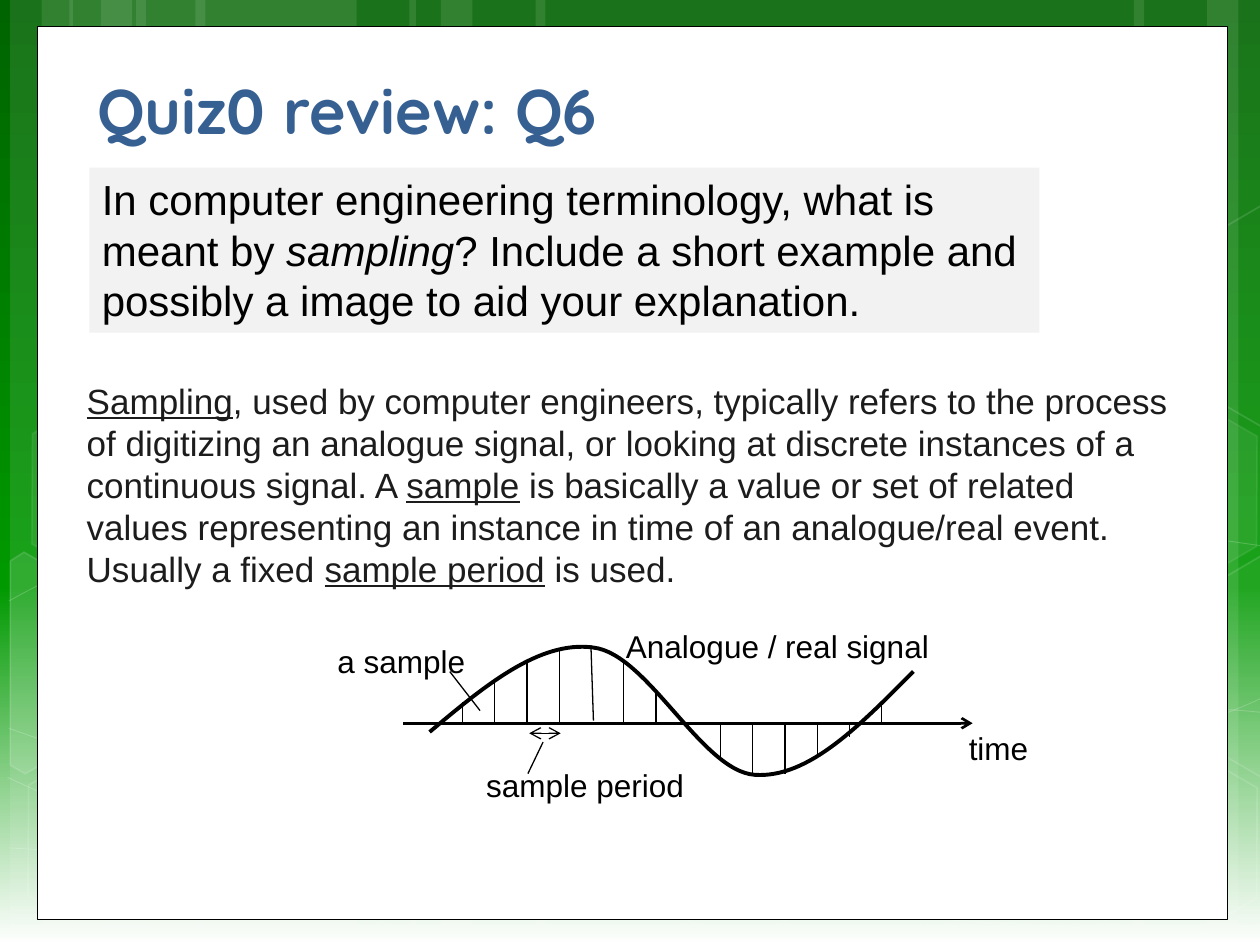
"""Build the quiz review slide that explains sampling with a signal diagram."""
from copy import deepcopy
from math import cos, radians, sin
from typing import NamedTuple

from lxml.etree import SubElement
from pptx import Presentation
from pptx.dml.color import RGBColor
from pptx.enum.shapes import MSO_CONNECTOR, MSO_SHAPE
from pptx.enum.text import MSO_ANCHOR, MSO_AUTO_SIZE, PP_ALIGN
from pptx.oxml.ns import qn
from pptx.util import Inches, Pt

COLORS = {"dark": "006400", "green": "009900", "white": "FFFFFF", "black": "000000",
          "title": "376092", "question": "F2F2F2", "answer": "1C1C1C"}
AXIS_Y = 5.74
TILT = 30


class Rect(NamedTuple):
    left: float
    top: float
    width: float
    height: float


class Hexagon(NamedTuple):
    left: float
    top: float
    fill_alpha: int
    line_alpha: int


class CutHexagon(NamedTuple):
    center: tuple
    points: list
    fill_alpha: int


class Span(NamedTuple):
    text: str
    style: str = ""


class Stroke(NamedTuple):
    start: tuple
    end: tuple
    width: float = 0.75
    arrows: tuple = ()


BANDS = [(1.08, 1.75), (0.08, 0.5), (0.33, 0.83), (1.55, 1.75), (0.55, 0.5), (0.8, 0.83),
         (7.33, 1.75), (9.58, 0.5), (9, 0.83), (4.25, 3.08), (3.25, 0.5), (3.5, 0.83)]
WAVES = [
    [(0.07, 6.73), (0.61, 6.76), (1.15, 6.79), (1.9, 6.78), (2.65, 6.77), (3.58, 6.75), (4.58, 6.65),
     (5.58, 6.55), (7, 6.36), (7.92, 6.17), (8.83, 5.98), (9.77, 5.68), (10.07, 5.51)],
    [(0.07, 4.77), (0.36, 4.61), (0.65, 4.46), (1.21, 4.31), (1.78, 4.16), (2.59, 3.94), (3.47, 3.87),
     (4.36, 3.8), (5.44, 3.79), (6.54, 3.87), (7.64, 3.95), (9.47, 4.26), (10.07, 4.34)],
    [(0.06, 6.17), (1.27, 6.72), (2.47, 7.27), (3.34, 7.49)],
    [(0.07, 5.78), (0.38, 5.89), (0.7, 6), (1.28, 6.16), (1.86, 6.31), (2.73, 6.56), (3.57, 6.73),
     (4.4, 6.9), (5.45, 7.08), (6.28, 7.18), (7.11, 7.29), (8, 7.33), (8.53, 7.36),
     (9.05, 7.4), (9.19, 7.38), (9.45, 7.38), (9.71, 7.37), (9.89, 7.35), (10.07, 7.34)],
    [(2.42, 7.49), (2.6, 7.29), (2.78, 7.09), (3.02, 6.91), (3.26, 6.73), (3.6, 6.53), (3.88, 6.39),
     (4.16, 6.25), (4.33, 6.19), (4.7, 6.09), (5.06, 5.99), (5.73, 5.85), (6.08, 5.78),
     (6.44, 5.71), (6.49, 5.71), (6.8, 5.69), (7.11, 5.66), (7.6, 5.63), (7.94, 5.62),
     (8.29, 5.61), (8.86, 5.62), (8.86, 5.62), (8.86, 5.62), (9.53, 5.62), (9.53, 5.62),
     (9.71, 5.63), (9.88, 5.64), (9.97, 5.65), (10.06, 5.66), (10.03, 5.65), (10.06, 5.66)],
]
HEXAGONS = [Hexagon(3.34, 0.36, 4, 8), Hexagon(4.97, 5.89, 6, 12), Hexagon(0.11, 5.91, 0, 12),
            Hexagon(0.14, 3.12, 7, 8), Hexagon(1.74, 5.92, 0, 12), Hexagon(8.34, 5.93, 0, 12),
            Hexagon(8.34, 3.14, 7, 8)]
CUT_HEXAGONS = [
    CutHexagon((0.36, 5.35), [(0.08, 4.45), (0.19, 4.38), (0.96, 4.82), (0.95, 5.7), (0.2, 6.14),
                              (0.08, 6.07)], 10),
    CutHexagon((9.85, 5.2), [(9.26, 4.85), (10.01, 4.41), (10.09, 4.46), (10.09, 6.13),
                             (10.02, 6.17), (9.26, 5.73)], 4),
    CutHexagon((9.85, 2.41), [(9.26, 2.07), (10.01, 1.63), (10.1, 1.68), (10.09, 3.35),
                              (10.02, 3.39), (9.26, 2.95)], 0),
]
SIGNAL = [(3.41, 5.81), (3.84, 5.45), (4.28, 5.08), (4.71, 5.14), (5.14, 5.19), (5.57, 6.12),
          (5.99, 6.15), (6.42, 6.18), (6.83, 5.75), (7.25, 5.33)]
FIRST_SAMPLE, SAMPLE_STEP = 3.67, 0.256
SAMPLE_ENDS = [5.57, 5.41, 5.26, 5.14, None, 5.26, 5.5, None, 6.03, 6.16, 6.14, 6.01, 5.85, 5.57]
STROKES = [Stroke((3.2, AXIS_Y), (7.72, AXIS_Y), 1.5, ("tailEnd",)),
           Stroke((4.71, 5.72), (4.69, 5.12)),
           Stroke((4.2, 5.82), (4.45, 5.82), arrows=("headEnd", "tailEnd")),
           Stroke((4.31, 5.89), (4.19, 6.14)), Stroke((3.81, 5.64), (3.57, 5.33))]
LABELS = {"time": Rect(7.59, 5.74, 0.68, 0.4), "Analogue / real signal": Rect(4.87, 4.93, 2.63, 0.4),
          "sample period": Rect(3.76, 6.03, 1.83, 0.4), "a sample": Rect(2.58, 5.05, 1.24, 0.4)}
QUESTION = [Span("In computer engineering terminology, what is meant by "), Span("sampling", "italic"),
            Span("? Include a short example and possibly a image to aid your explanation.")]
ANSWER = [
    Span("Sampling", "underline"),
    Span(", used by computer engineers, typically refers to the process of digitizing an analogue "
         "signal, or looking at discrete instances of a continuous signal. A "),
    Span("sample", "underline"),
    Span(" is basically a value or set of related values representing an instance in time of an "
         "analogue/real event. Usually a fixed "),
    Span("sample period", "underline"), Span(" is used."),
]


def color(name: str) -> RGBColor:
    return RGBColor.from_string(COLORS[name])


def set_alpha(element, percent: int) -> None:
    if percent < 100:
        SubElement(element.find(".//" + qn("a:srgbClr")), qn("a:alpha"), val=str(percent * 1000))


def paint(shape, fill="", fill_alpha=100, line="", line_width=1.0, line_alpha=100) -> None:
    shape.shadow.inherit = False
    shape.fill.background()
    shape.line.fill.background()
    if fill and fill_alpha:
        shape.fill.solid()
        shape.fill.fore_color.rgb = color(fill)
        set_alpha(shape.element.spPr.find(qn("a:solidFill")), fill_alpha)
    if line:
        shape.line.color.rgb = color(line)
        shape.line.width = Pt(line_width)
        set_alpha(shape.element.spPr.find(qn("a:ln")), line_alpha)


def add_preset(page, area: Rect, preset=MSO_SHAPE.RECTANGLE):
    return page.shapes.add_shape(preset, *map(Inches, area))


def add_outline(page, points: list, close: bool):
    corners = [(Inches(x), Inches(y)) for x, y in points]
    builder = page.shapes.build_freeform(*corners[0])
    builder.add_line_segments(corners[1:], close=close)
    return builder.convert_to_shape()


def add_curve(page, points: list):
    shape = add_outline(page, points, False)
    segments = list(shape.element.iter(qn("a:lnTo")))
    for first, second, third in zip(*[iter(segments)] * 3):
        first.tag = qn("a:cubicBezTo")
        for segment in (second, third):
            first.append(segment[0])
            segment.getparent().remove(segment)
    return shape


def turn_back(point: tuple, center: tuple) -> tuple:
    x, y = point[0] - center[0], point[1] - center[1]
    c, s = cos(radians(TILT)), sin(radians(TILT))
    return center[0] + c * x + s * y, center[1] - s * x + c * y


def add_stroke(page, stroke: Stroke) -> None:
    line = page.shapes.add_connector(MSO_CONNECTOR.STRAIGHT, *map(Inches, stroke.start + stroke.end))
    line.line.color.rgb = color("black")
    line.line.width = Pt(stroke.width)
    for arrow in stroke.arrows:
        SubElement(line.element.spPr.find(qn("a:ln")), qn("a:" + arrow), type="arrow")
    SubElement(line.element.spPr, qn("a:effectLst"))


def write(box, spans: list, size: int, ink: str, wrap=True, font="Arial", anchor=MSO_ANCHOR.TOP) -> None:
    frame = box.text_frame
    frame.word_wrap, frame.vertical_anchor = wrap, anchor
    frame.auto_size = MSO_AUTO_SIZE.NONE if box.is_placeholder else MSO_AUTO_SIZE.SHAPE_TO_FIT_TEXT
    para = frame.paragraphs[0]
    para.alignment = PP_ALIGN.LEFT
    para.font.name, para.font.size, para.font.color.rgb = font, Pt(size), color(ink)
    for span in spans:
        run = para.add_run()
        run.text = span.text
        if span.style:
            setattr(run.font, span.style, True)


def add_text_panel(page, area: Rect, fill: str, spans: list, size: int, ink: str) -> None:
    box = add_preset(page, area)
    paint(box, fill)
    write(box, spans, size, ink)


def add_backdrop(page) -> None:
    fill = page.background.fill
    fill.gradient()
    fill.gradient_angle = 270
    stop_list = page.element.find(".//" + qn("a:gsLst"))
    stop_list.insert(1, deepcopy(stop_list[0]))
    for stop, name, position in zip(fill.gradient_stops, ("dark", "green", "white"), (0, 0.62, 1)):
        stop.color.rgb, stop.position = color(name), position
    for left, width in BANDS:
        paint(add_preset(page, Rect(left, 0, width, 7.5)), "white", 10)
    for wave in WAVES:
        paint(add_curve(page, wave), line="white", line_width=0.5, line_alpha=20)
    for item in HEXAGONS:
        shape = add_preset(page, Rect(item.left, item.top, 1.75, 1.52), MSO_SHAPE.HEXAGON)
        shape.rotation, shape.adjustments[0] = TILT, 0.285
        paint(shape, "white", item.fill_alpha, "white", 1, item.line_alpha)
    for item in CUT_HEXAGONS:
        shape = add_outline(page, [turn_back(point, item.center) for point in item.points], True)
        shape.rotation = TILT
        paint(shape, "white", item.fill_alpha, "white", 1, 12)
    paint(add_preset(page, Rect(0.3, 0.21, 9.44, 7.09)), "white", line="black", line_width=0.5)


def add_title(page) -> None:
    title = page.shapes.title
    title.left, title.top, title.width, title.height = map(Inches, (0.67, 0.51, 5.51, 0.71))
    write(title, [Span("Quiz0 review: Q6", "bold")], 36, "title", True, "Quicksand", MSO_ANCHOR.BOTTOM)
    title.element.getparent().append(title.element)


def add_diagram(page) -> None:
    paint(add_curve(page, SIGNAL), line="black", line_width=2.25)
    stems = [(FIRST_SAMPLE + i * SAMPLE_STEP, end) for i, end in enumerate(SAMPLE_ENDS) if end]
    for stroke in STROKES + [Stroke((x, AXIS_Y), (x, end)) for x, end in stems]:
        add_stroke(page, stroke)
    for text, area in LABELS.items():
        write(page.shapes.add_textbox(*map(Inches, area)), [Span(text)], 18, "black", wrap=False)


deck = Presentation()
deck.slide_width, deck.slide_height = Inches(10), Inches(7.5)
main_page = deck.slides.add_slide(deck.slide_layouts[5])
add_backdrop(main_page)
add_title(main_page)
add_text_panel(main_page, Rect(0.71, 1.33, 7.54, 1.31), "question", QUESTION, 24, "black")
add_text_panel(main_page, Rect(0.59, 2.96, 8.84, 1.78), "white", ANSWER, 20, "answer")
add_diagram(main_page)
deck.save("out.pptx")
